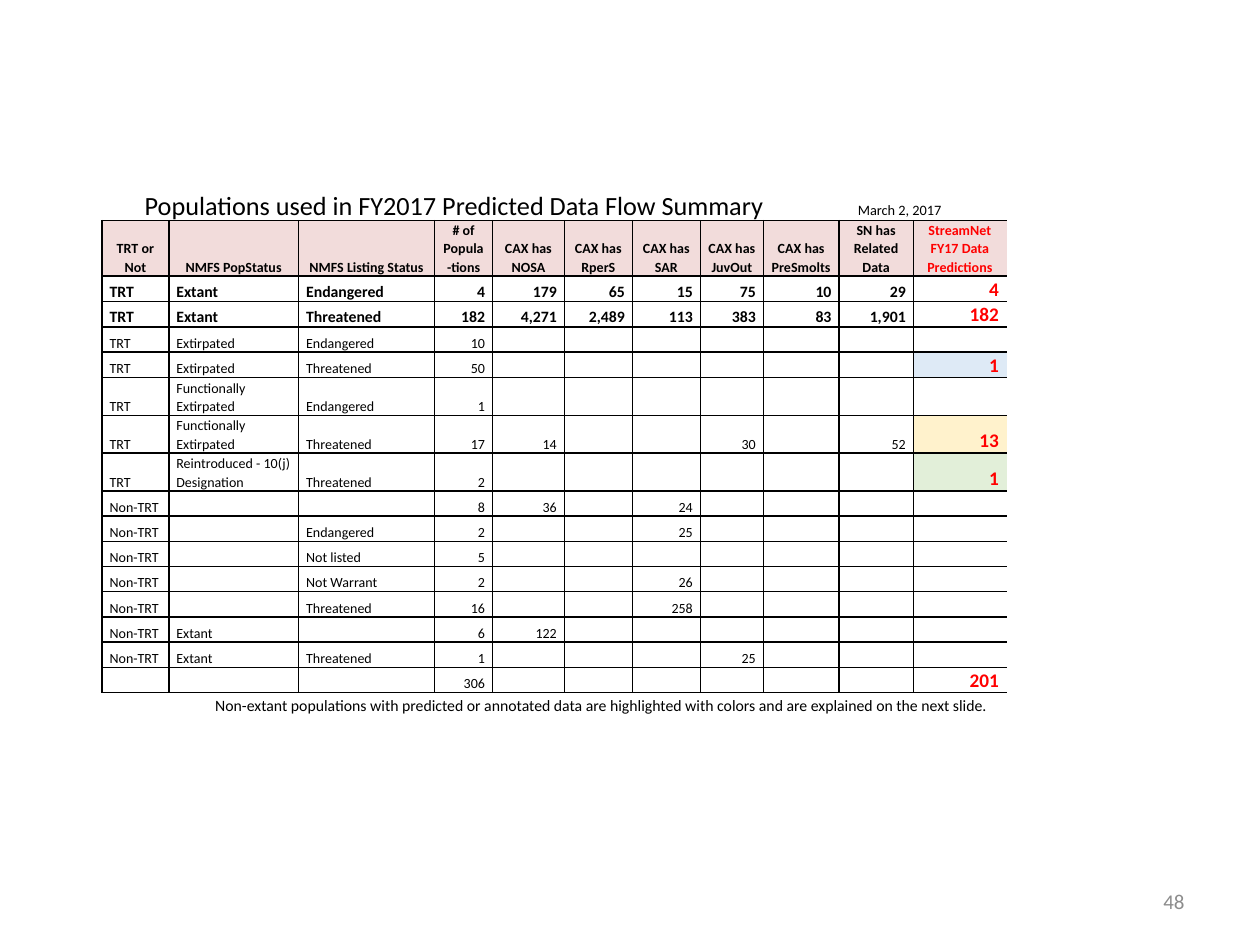
"""Build the slide with the populations table of the FY2017 data flow summary."""
from lxml.etree import SubElement, fromstring
from pptx import Presentation
from pptx.dml.color import RGBColor
from pptx.enum.text import MSO_ANCHOR as ANCHOR, PP_ALIGN as ALIGN
from pptx.oxml.ns import nsdecls, qn
from pptx.util import Inches, Pt

BLACK = RGBColor(0x00, 0x00, 0x00)
RED = RGBColor(0xFF, 0x00, 0x00)
GRAY = RGBColor(0x8C, 0x8C, 0x8C)
PINK = RGBColor(0xF2, 0xDC, 0xDB)
BLUE = RGBColor(0xDE, 0xEA, 0xF6)
YELLOW = RGBColor(0xFF, 0xF2, 0xCC)
GREEN = RGBColor(0xE2, 0xEF, 0xD9)

COLS = [0.53, 1.03, 1.08, 0.46, 0.57, 0.54, 0.54, 0.5, 0.6, 0.59, 0.74]
HEADER_H, ROW_H, TALL_ROW_H = 0.44, 0.2, 0.3
ROWS = [
    "TRT or Not|NMFS PopStatus|NMFS Listing Status|# of Popula-tions|CAX has NOSA|CAX has RperS"
    "|CAX has SAR|CAX has JuvOut|CAX has PreSmolts|SN has Related Data|StreamNet FY17 Data Predictions",
    "TRT|Extant|Endangered|4|179|65|15|75|10|29|4",
    "TRT|Extant|Threatened|182|4,271|2,489|113|383|83|1,901|182",
    "TRT|Extirpated|Endangered|10|||||||",
    "TRT|Extirpated|Threatened|50|||||||1",
    "TRT|Functionally Extirpated|Endangered|1|||||||",
    "TRT|Functionally Extirpated|Threatened|17|14|||30||52|13",
    "TRT|Reintroduced - 10(j) Designation|Threatened|2|||||||1",
    "Non-TRT|||8|36||24||||",
    "Non-TRT||Endangered|2|||25||||",
    "Non-TRT||Not listed|5|||||||",
    "Non-TRT||Not Warrant|2|||26||||",
    "Non-TRT||Threatened|16|||258||||",
    "Non-TRT|Extant||6|122||||||",
    "Non-TRT|Extant|Threatened|1||||25|||",
    "|||306|||||||201",
]
HIGHLIGHTS = {4: BLUE, 6: YELLOW, 7: GREEN}


def write(p, text, size=8, color=BLACK, bold=False, align=ALIGN.LEFT, spacing=None):
    p.alignment = align
    if spacing:
        p.line_spacing = spacing
    if not text:
        SubElement(p._p, qn("a:endParaRPr"), sz=str(size * 100))
        return
    r = p.add_run()
    r.text = text
    r.font.name = "Calibri"
    r.font.size = Pt(size)
    r.font.bold = bold
    r.font.color.rgb = color


def add_box(x, y, w, h, anchor=ANCHOR.TOP):
    tf = s.shapes.add_textbox(Inches(x), Inches(y), Inches(w), Inches(h)).text_frame
    tf.word_wrap = True
    tf.vertical_anchor = anchor
    return tf.paragraphs[0]


prs = Presentation()
prs.slide_width, prs.slide_height = Inches(10), Inches(7.5)
s = prs.slides.add_slide(prs.slide_layouts[6])

heights = [HEADER_H] + [TALL_ROW_H if 5 <= i <= 7 else ROW_H for i in range(1, len(ROWS))]
table = s.shapes.add_table(len(ROWS), len(COLS), Inches(0.81), Inches(1.75),
                           Inches(sum(COLS)), Inches(sum(heights))).table
table.first_row = table.horz_banding = False
for col, width in zip(table.columns, COLS):
    col.width = Inches(width)

last = len(COLS) - 1
for i, row in enumerate(ROWS):
    table.rows[i].height = Inches(heights[i])
    for j, text in enumerate(row.split("|")):
        cell = table.cell(i, j)
        cell.vertical_anchor = ANCHOR.BOTTOM
        cell.margin_left = cell.margin_right = Inches(0.06)
        cell.margin_top = cell.margin_bottom = 0
        fill = PINK if i == 0 else HIGHLIGHTS.get(i) if j == last else None
        if fill:
            cell.fill.solid()
            cell.fill.fore_color.rgb = fill
        else:
            cell.fill.background()
        for k, side in enumerate("LRTB"):
            paint = '<a:solidFill><a:srgbClr val="000000"/></a:solidFill>'
            if side == "R" and j == last:
                paint = "<a:noFill/>"
            line = fromstring(f'<a:ln{side} {nsdecls("a")} w="12700">{paint}</a:ln{side}>')
            cell._tc.get_or_add_tcPr().insert(k, line)

        size = 9 if i in (1, 2) else 8
        if j == last and i > 0 and text:
            size = 11
        align = ALIGN.CENTER if i == 0 else ALIGN.LEFT if j < 3 else ALIGN.RIGHT
        write(cell.text_frame.paragraphs[0], text, size=size, bold=i < 3 or j == last,
              color=RED if j == last else BLACK, align=align, spacing=1.07)

p = add_box(1.05, 1.45, 6.71, 0.35)
tabs = SubElement(p._p.get_or_add_pPr(), qn("a:tabLst"))
SubElement(tabs, qn("a:tab"), pos=str(Inches(5.66)), algn="l")
write(p, "Populations used in FY2017 Predicted Data Flow Summary\t", size=15)
write(p, "March 2, 2017", size=8.2)

p = add_box(1.61, 5.47, 6.81, 0.25)
write(p, "Non-extant populations with predicted or annotated data are highlighted "
         "with colors and are explained on the next slide.", size=9)

p = add_box(7.17, 6.95, 2.33, 0.4, anchor=ANCHOR.MIDDLE)
write(p, "48", size=12, color=GRAY, align=ALIGN.RIGHT)

prs.save("out.pptx")
